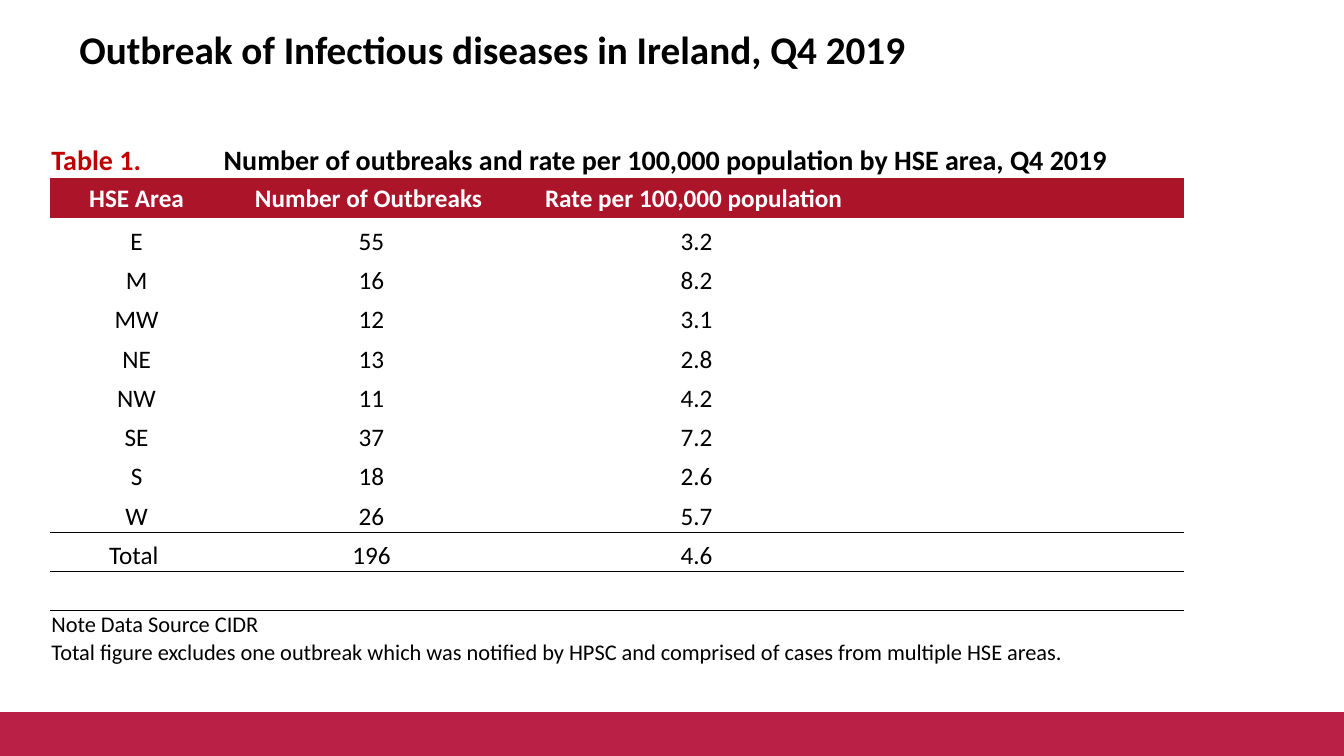
from typing import NamedTuple

from lxml.etree import SubElement
from pptx import Presentation
from pptx.dml.color import RGBColor
from pptx.enum.shapes import MSO_SHAPE as Shape
from pptx.enum.text import MSO_ANCHOR as Anchor, PP_ALIGN as Align
from pptx.oxml.ns import qn
from pptx.util import Pt

FONT = "Calibri"
COLORS = {
    "text": "000000",
    "label": "C00000",
    "header": "AC142A",
    "header_text": "FFFFFF",
    "footer": "BA1F46",
}
NO_STYLE = "{2D5ABB26-0587-4C30-8999-92F81FD0307C}"

COLUMN_WIDTHS = [123.12, 212.4, 252, 87.12, 67.68, 67.68]
ROW_HEIGHT = 28.08
ROW_HEIGHTS = [34.56, 16.56] + [ROW_HEIGHT] * 13
CAPTION_ROW, HEADER_ROW, TOTAL_ROW, NOTE_ROW = 2, 3, 12, 14

HEADINGS = ["HSE Area", "Number of Outbreaks ", "Rate per 100,000 population "]
NOTE = (
    "Note Data Source CIDR\n"
    "Total figure excludes one outbreak which was notified by HPSC "
    "and comprised of cases from multiple HSE areas."
)


class AreaRate(NamedTuple):
    area: str
    outbreaks: str
    rate: str


class TextStyle(NamedTuple):
    size: float
    color: str = "text"
    bold: bool = False
    align: Align = Align.LEFT
    anchor: Anchor = Anchor.BOTTOM


TITLE = TextStyle(28, bold=True)
LABEL = TextStyle(20, "label", True)
CAPTION = TextStyle(20, bold=True)
HEADING = TextStyle(18, "header_text", True, Align.CENTER, Anchor.MIDDLE)
BODY = TextStyle(18, align=Align.CENTER)
SMALL = TextStyle(16)

RATES = [
    AreaRate("E", "55", "3.2"),
    AreaRate("M", "16", "8.2"),
    AreaRate("MW", "12", "3.1"),
    AreaRate("NE", "13", "2.8"),
    AreaRate("NW", "11", "4.2"),
    AreaRate("SE", "37", "7.2"),
    AreaRate("S", "18", "2.6"),
    AreaRate("W", "26", "5.7"),
    AreaRate("Total ", "196", "4.6"),
]


def color(name: str) -> RGBColor:
    return RGBColor.from_string(COLORS[name])


def write(frame, text: str, style: TextStyle) -> None:
    frame.text = text
    for para in frame.paragraphs:
        para.alignment = style.align
        for span in para.runs:
            span.font.name = FONT
            span.font.size = Pt(style.size)
            span.font.bold = style.bold
            span.font.color.rgb = color(style.color)


def fill_cell(cell, text: str, style: TextStyle) -> None:
    write(cell.text_frame, text, style)
    cell.vertical_anchor = style.anchor


def reset_cell(cell) -> None:
    """Clear the fill and let an empty cell fit the lowest row."""
    cell.margin_left = cell.margin_right = cell.margin_top = Pt(0.72)
    cell.margin_bottom = Pt(0)
    cell.fill.background()
    SubElement(cell.text_frame.paragraphs[0]._p, qn("a:endParaRPr"), sz="1000")


def add_border(cell, edge: str) -> None:
    line = SubElement(cell._tc.get_or_add_tcPr(), qn(f"a:{edge}"), w=str(Pt(0.5)))
    fill = SubElement(line, qn("a:solidFill"))
    SubElement(fill, qn("a:srgbClr"), val=COLORS["text"])


def add_rules(table) -> None:
    """Rule off the total row; borders must stand before the fill in the XML."""
    edges = {TOTAL_ROW - 1: ["lnB"], TOTAL_ROW: ["lnT", "lnB"], TOTAL_ROW + 1: ["lnT"]}
    for row, names in edges.items():
        for column in range(len(COLUMN_WIDTHS)):
            for name in names:
                add_border(table.cell(row, column), name)


def add_rate_table(page) -> None:
    frame = page.shapes.add_table(
        len(ROW_HEIGHTS), len(COLUMN_WIDTHS),
        Pt(36), Pt(48.24), Pt(sum(COLUMN_WIDTHS)), Pt(sum(ROW_HEIGHTS)),
    )
    table = frame.table
    table.first_row = table.horz_banding = False
    table._tbl.tblPr.find(qn("a:tableStyleId")).text = NO_STYLE
    for column, width in zip(table.columns, COLUMN_WIDTHS):
        column.width = Pt(width)
    for row, height in zip(table.rows, ROW_HEIGHTS):
        row.height = Pt(height)

    add_rules(table)
    for cell in table.iter_cells():
        reset_cell(cell)
    last = len(COLUMN_WIDTHS) - 1
    for row, first, end in [(0, 0, 3), (CAPTION_ROW, 1, last), (NOTE_ROW, 0, last)]:
        table.cell(row, first).merge(table.cell(row, end))

    fill_cell(table.cell(CAPTION_ROW, 0), "Table 1.", LABEL)
    fill_cell(
        table.cell(CAPTION_ROW, 1),
        "Number of outbreaks and rate per 100,000 population by HSE area, Q4 2019",
        CAPTION,
    )
    for cell in table.rows[HEADER_ROW].cells:
        cell.fill.solid()
        cell.fill.fore_color.rgb = color("header")
    for row, values in enumerate([HEADINGS, *RATES], HEADER_ROW):
        for column, value in enumerate(values):
            fill_cell(table.cell(row, column), value, HEADING if row == HEADER_ROW else BODY)
    fill_cell(table.cell(NOTE_ROW, 0), NOTE, SMALL)


def add_footer_band(page) -> None:
    band = page.shapes.add_shape(Shape.RECTANGLE, Pt(0), Pt(509.76), Pt(960), Pt(30.24))
    band.shadow.inherit = False
    band.fill.solid()
    band.fill.fore_color.rgb = color("footer")
    band.line.color.rgb = color("footer")
    band.line.width = Pt(2)


def add_title(page) -> None:
    box = page.shapes.add_textbox(Pt(48), Pt(12.24), Pt(744), Pt(44.64))
    frame = box.text_frame
    frame.word_wrap = True
    frame.vertical_anchor = Anchor.MIDDLE
    frame.margin_left = frame.margin_right = Pt(8.64)
    frame.margin_top = frame.margin_bottom = Pt(4.32)
    write(frame, "Outbreak of Infectious diseases in Ireland, Q4 2019", TITLE)


def main() -> None:
    deck = Presentation()
    deck.slide_width, deck.slide_height = Pt(960), Pt(540)
    page = deck.slides.add_slide(deck.slide_layouts[6])
    add_footer_band(page)
    add_rate_table(page)
    add_title(page)
    deck.save("out.pptx")


if __name__ == "__main__":
    main()
